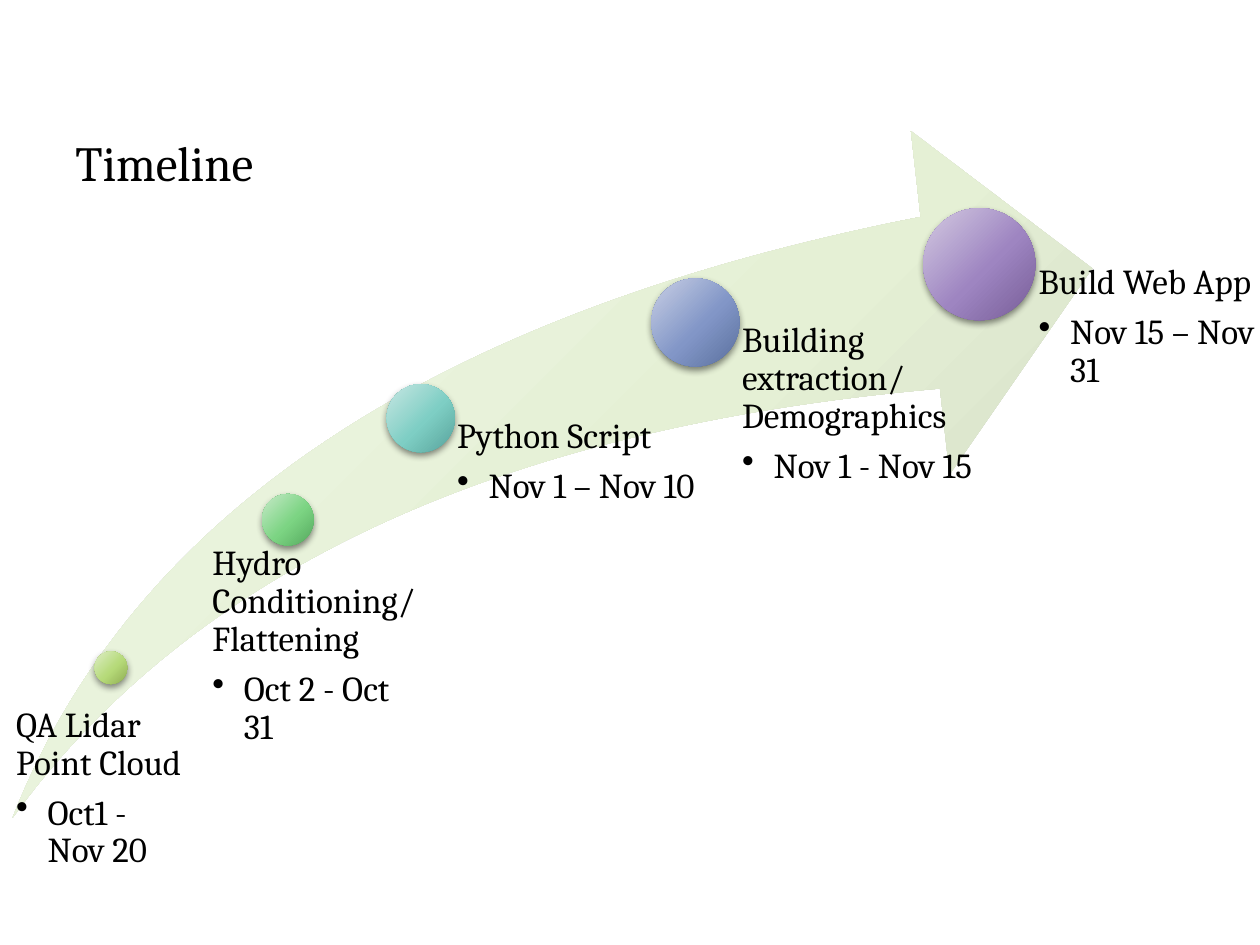
from dataclasses import dataclass
from lxml import etree
from pptx import Presentation
from pptx.dml.color import RGBColor
from pptx.enum.shapes import MSO_SHAPE as Preset
from pptx.enum.text import MSO_ANCHOR as Anchor
from pptx.oxml.ns import qn
from pptx.util import Pt

COLORS = {
    "text": "000000",
    "arrow": ("F2F8EA", "E5F0D5", "CFD7C3"),
    "lime": ("DDEDC6", "B6DA79", "90AE53"),
    "green": ("C7EAC9", "7CD483", "55A95E"),
    "teal": ("C8E7E3", "7ECEC4", "58A39B"),
    "blue": ("C9D0E5", "8296C7", "5A709D"),
    "purple": ("D4CBE2", "9E85C1", "775D97"),
}
FONT = "Cambria"
LABEL_BOTTOM = 524.5
INSET_RATIO = 0.53  # label inset relative to the marker diameter


@dataclass
class Milestone:
    """A marker given by its centre and diameter, with a label to its lower right."""
    name: str
    dates: str
    color: str
    center: tuple
    diameter: float
    label_width: float
    label_corner: tuple = None


MILESTONES = [
    Milestone("QA Lidar Point Cloud", "Oct1 - Nov 20", "lime",
              (63.4, 381.6), 18.7, 106.5, (-0.7, 404)),
    Milestone("Hydro Conditioning/ Flattening", "Oct 2 - Oct 31", "green",
              (164.5, 297), 29.5, 134.6, (105.8, 311.8)),
    Milestone("Python Script", "Nov 1 – Nov 10", "teal", (240.5, 239), 39, 157),
    Milestone("Building extraction/ Demographics", "Nov 1 - Nov 15", "blue",
              (397.4, 184.3), 50.4, 162.7),
    Milestone("Build Web App", "Nov 15 – Nov 31", "purple",
              (559.6, 151), 64.1, 162.7),
]


def add_element(parent, tag, **attributes):
    values = {name: str(value) for name, value in attributes.items()}
    return etree.SubElement(parent, qn(tag), values)


class TimelineSlide:
    def __init__(self, slide, font):
        self.slide = slide
        self.font = font

    def gradient_shape(self, preset, left, top, width, height, colors):
        shape = self.slide.shapes.add_shape(
            preset, Pt(left), Pt(top), Pt(width), Pt(height))
        shape.shadow.inherit = False
        shape.line.fill.background()
        shape.fill.gradient()
        gradient = shape.element.spPr.find(qn("a:gradFill"))
        for child in list(gradient):
            gradient.remove(child)
        stops = add_element(gradient, "a:gsLst")
        for position, color in zip((0, 55000, 100000), colors):
            stop = add_element(stops, "a:gs", pos=position)
            add_element(stop, "a:srgbClr", val=color)
        circle = add_element(gradient, "a:path", path="circle")
        add_element(circle, "a:fillToRect", l=-40000, t=-90000, r=140000, b=190000)
        return shape

    def arrow(self, left, top, width, height):
        shape = self.gradient_shape(
            Preset.SWOOSH_ARROW, left, top, width, height, COLORS["arrow"])
        shape.adjustments[0] = 0.25
        shape.adjustments[1] = 0.25

    def marker(self, center, diameter, colors):
        left, top = (value - diameter / 2 for value in center)
        shape = self.gradient_shape(
            Preset.OVAL, left, top, diameter, diameter, colors)
        effects = shape.element.spPr.find(qn("a:effectLst"))
        shadow = add_element(effects, "a:outerShdw", blurRad=Pt(4), dist=Pt(2),
                             dir=5400000, rotWithShape=0)
        color = add_element(shadow, "a:srgbClr", val="000000")
        add_element(color, "a:alpha", val=45000)

    def text_frame(self, left, top, width, height, margins):
        box = self.slide.shapes.add_textbox(Pt(left), Pt(top), Pt(width), Pt(height))
        frame = box.text_frame
        frame.word_wrap = True
        frame.vertical_anchor = Anchor.TOP
        (frame.margin_left, frame.margin_top,
         frame.margin_right, frame.margin_bottom) = map(Pt, margins)
        return frame

    def text_run(self, paragraph, text, size):
        run = paragraph.add_run()
        run.text = text
        run.font.name = self.font
        run.font.size = Pt(size)
        run.font.color.rgb = RGBColor.from_string(COLORS["text"])

    def title(self, text):
        frame = self.text_frame(36, 72, 648, 72, (7.2, 3.6, 7.2, 3.6))
        self.text_run(frame.paragraphs[0], text, 28)

    def milestone(self, item):
        self.marker(item.center, item.diameter, COLORS[item.color])
        left, top = item.label_corner or item.center
        frame = self.text_frame(left, top, item.label_width, LABEL_BOTTOM - top,
                                (item.diameter * INSET_RATIO, 0, 0, 0))
        heading = frame.paragraphs[0]
        heading.line_spacing = 0.9
        heading.space_after = Pt(7)
        self.text_run(heading, item.name, 20)

        dates = frame.add_paragraph()
        dates.level = 1
        dates.line_spacing = 0.9
        dates.space_after = Pt(3)
        properties = dates._p.get_or_add_pPr()
        properties.set("marL", str(Pt(18)))
        properties.set("indent", str(-Pt(18)))
        add_element(properties, "a:buChar", char="•")
        self.text_run(dates, item.dates, 20)


def main():
    presentation = Presentation()
    presentation.slide_width = Pt(720)
    presentation.slide_height = Pt(540)
    slide = presentation.slides.add_slide(presentation.slide_layouts[6])
    timeline = TimelineSlide(slide, FONT)
    timeline.arrow(7.2, 74.9, 617, 392.4)
    for item in MILESTONES:
        timeline.milestone(item)
    timeline.title("Timeline")
    presentation.save("out.pptx")


if __name__ == "__main__":
    main()
